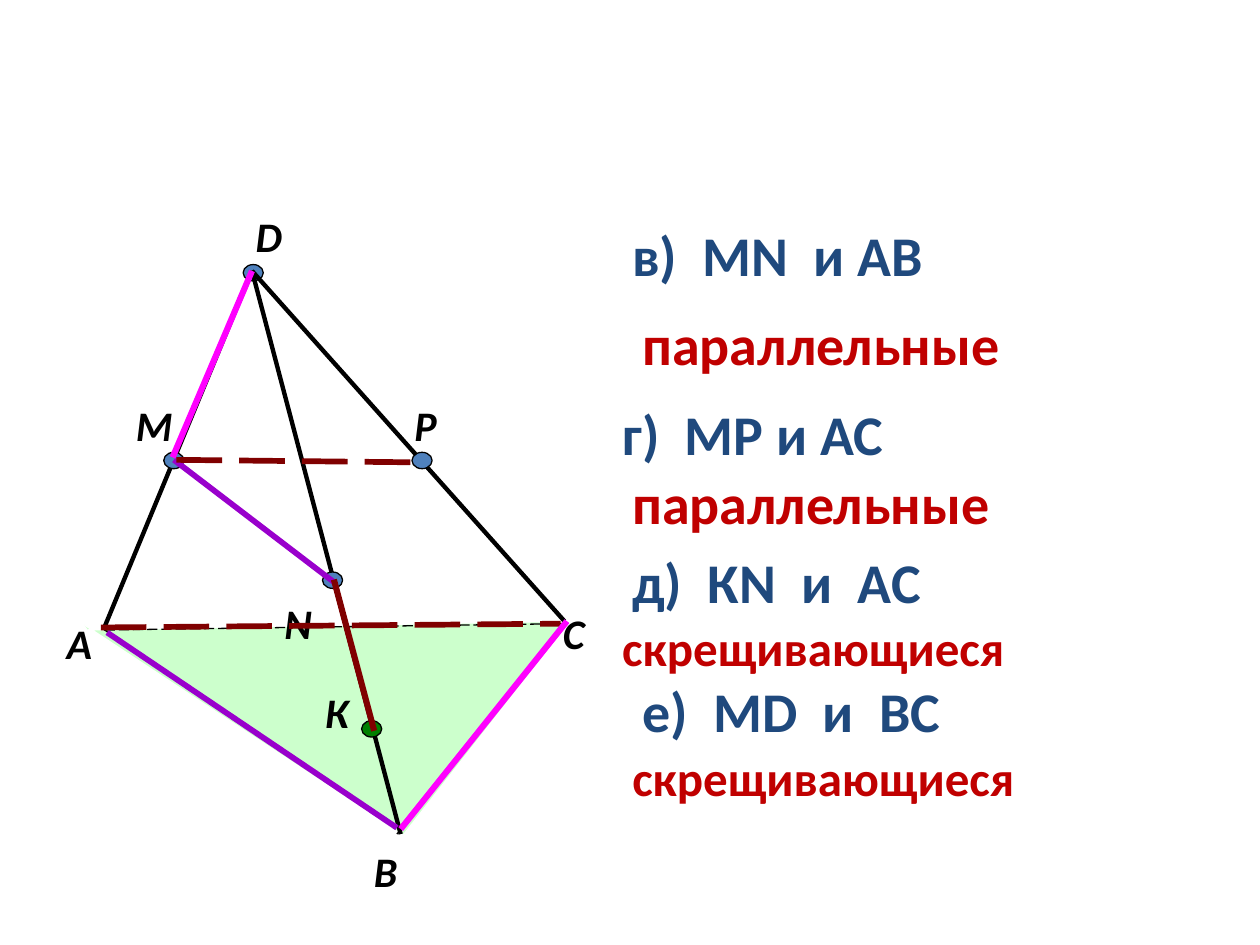
from lxml import etree
from pptx import Presentation
from pptx.dml.color import RGBColor
from pptx.enum.dml import MSO_LINE_DASH_STYLE as Dash
from pptx.enum.shapes import MSO_CONNECTOR as Connector, MSO_SHAPE as Shape
from pptx.enum.text import MSO_AUTO_SIZE as AutoSize
from pptx.oxml.ns import qn
from pptx.util import Inches, Pt

COLORS = {
    "ink": "000000", "white": "FFFFFF", "base": "CCFFCC", "dot": "4F81BD",
    "green": "008000", "violet": "9900CC", "maroon": "800000",
    "pink": "FF00FF", "question": "1F497D", "answer": "C00000",
}
FONT = "Calibri"

# All positions below are inches from the corner of the region's box
BASE = [(0.27, 3.36), (2.8, 5.03), (4.13, 3.33), (0.3, 3.4)]
LABELS = [
    ("А", 0.03, 3.25, 0.44), ("В", 2.47, 5.06, 0.44), ("С", 3.97, 3.17, 0.44),
    ("D", 1.53, 0.02, 0.44), ("M", 0.58, 1.52, 0.48), ("N", 1.76, 3.09, 0.44),
    ("P", 2.79, 1.52, 0.42), ("К", 2.08, 3.8, 0.41),
]
APEX = (1.6, 0.55)
APEX_DOT = (1.53, 0.5, "dot")
POINT_DOTS = [(0.9, 1.99, "dot"), (2.16, 2.94, "dot"), (2.87, 1.99, "dot"),
              (2.47, 4.12, "green")]
# start, end, colour, width, dashed
EDGES = [
    ((0.42, 3.4), APEX, "ink", 2.5, False),
    ((2.78, 5.02), APEX, "ink", 2.5, False),
    ((4.08, 3.33), APEX, "ink", 2.5, False),
]
SEGMENTS = [
    ((2.75, 5.02), (4.08, 3.35), "ink", 0.75, False),
    ((0.43, 3.4), (4.07, 3.35), "ink", 0.75, True),
    ((0.43, 3.4), (2.77, 4.98), "ink", 0.75, False),
    ((0.45, 3.42), (2.75, 4.97), "violet", 3.25, False),   # AB
    ((0.98, 2.05), (2.25, 3.02), "violet", 3.25, False),   # MN
    ((0.4, 3.38), (4.05, 3.35), "maroon", 3.25, True),     # AC
    ((1, 2.05), (2.93, 2.07), "maroon", 3.25, True),       # MP
    ((2.25, 3), (2.57, 4.2), "maroon", 3.5, False),        # NK
    (APEX, (0.97, 2.03), "pink", 3.5, False),              # DM
    ((2.78, 4.98), (4.1, 3.33), "pink", 3.5, False),       # BC
]
# text, left, top, width, height, size, colour
EXERCISES = [
    ("в)  МN  и AB", 0.08, 0, 2.52, 0.64, 32, "question"),
    ("параллельные", 0.16, 0.71, 3.15, 0.64, 32, "answer"),
    ("г)  МР и AС", 0, 1.42, 2.3, 0.64, 32, "question"),
    ("параллельные", 0.08, 1.97, 3.07, 0.64, 32, "answer"),
    ("д)  КN  и  AС", 0.08, 2.6, 2.52, 0.64, 32, "question"),
    ("скрещивающиеся", 0, 3.15, 3.86, 0.57, 28, "answer"),
    ("е)  МD  и  BС", 0.16, 3.62, 2.59, 0.64, 32, "question"),
    ("скрещивающиеся", 0.08, 4.18, 3.54, 0.57, 28, "answer"),
]


def color(name):
    return RGBColor.from_string(COLORS[name])


def paint(shape, fill, line):
    shape.shadow.inherit = False
    shape.fill.solid()
    shape.fill.fore_color.rgb = color(fill)
    shape.line.color.rgb = color(line)
    shape.line.width = Pt(0.75)


def add_text(page, text, left, top, width, height, size, ink,
             wrap=False, italic=False):
    frame = page.shapes.add_textbox(left, top, width, height).text_frame
    frame.word_wrap = wrap
    frame.auto_size = AutoSize.SHAPE_TO_FIT_TEXT
    span = frame.paragraphs[0].add_run()
    span.text = text
    font = span.font
    font.name, font.size, font.bold = FONT, Pt(size), True
    if italic:
        font.italic = True
    font.color.rgb = color(ink)


def add_dot(page, left, top, x, y, fill):
    dot = page.shapes.add_shape(Shape.OVAL, left + Inches(x), top + Inches(y),
                                Inches(0.16), Inches(0.13))
    paint(dot, fill, "ink")


def add_segment(page, left, top, start, end, ink, width, dashed):
    segment = page.shapes.add_connector(
        Connector.STRAIGHT,
        left + Inches(start[0]), top + Inches(start[1]),
        left + Inches(end[0]), top + Inches(end[1]))
    segment.line.color.rgb = color(ink)
    segment.line.width = Pt(width)
    if dashed:
        segment.line.dash_style = Dash.LONG_DASH
    etree.SubElement(segment._element.spPr, qn("a:effectLst"))


def draw_pyramid(page, left, top):
    # Shaded base
    points = [(left + Inches(x), top + Inches(y)) for x, y in BASE]
    builder = page.shapes.build_freeform(*points[0], scale=1.0)
    builder.add_line_segments(points[1:], close=False)
    paint(builder.convert_to_shape(), "base", "white")

    # Point names
    for name, x, y, width in LABELS:
        add_text(page, name, left + Inches(x), top + Inches(y), Inches(width),
                 Inches(0.5), 24, "ink", italic=True)

    # Edges from the apex, marked points, highlighted segments
    add_dot(page, left, top, *APEX_DOT)
    for edge in EDGES:
        add_segment(page, left, top, *edge)
    for dot in POINT_DOTS:
        add_dot(page, left, top, *dot)
    for segment in SEGMENTS:
        add_segment(page, left, top, *segment)


def write_exercises(page, left, top):
    for text, x, y, width, height, size, ink in EXERCISES:
        add_text(page, text, left + Inches(x), top + Inches(y), Inches(width),
                 Inches(height), size, ink, wrap=ink == "answer")


def main():
    deck = Presentation()
    deck.slide_width, deck.slide_height = Inches(10), Inches(7.5)
    page = deck.slides.add_slide(deck.slide_layouts[6])
    page.background.fill.solid()
    page.background.fill.fore_color.rgb = color("white")
    draw_pyramid(page, Inches(0.4), Inches(1.6))
    write_exercises(page, Inches(4.84), Inches(1.7))
    deck.save("out.pptx")


if __name__ == "__main__":
    main()
